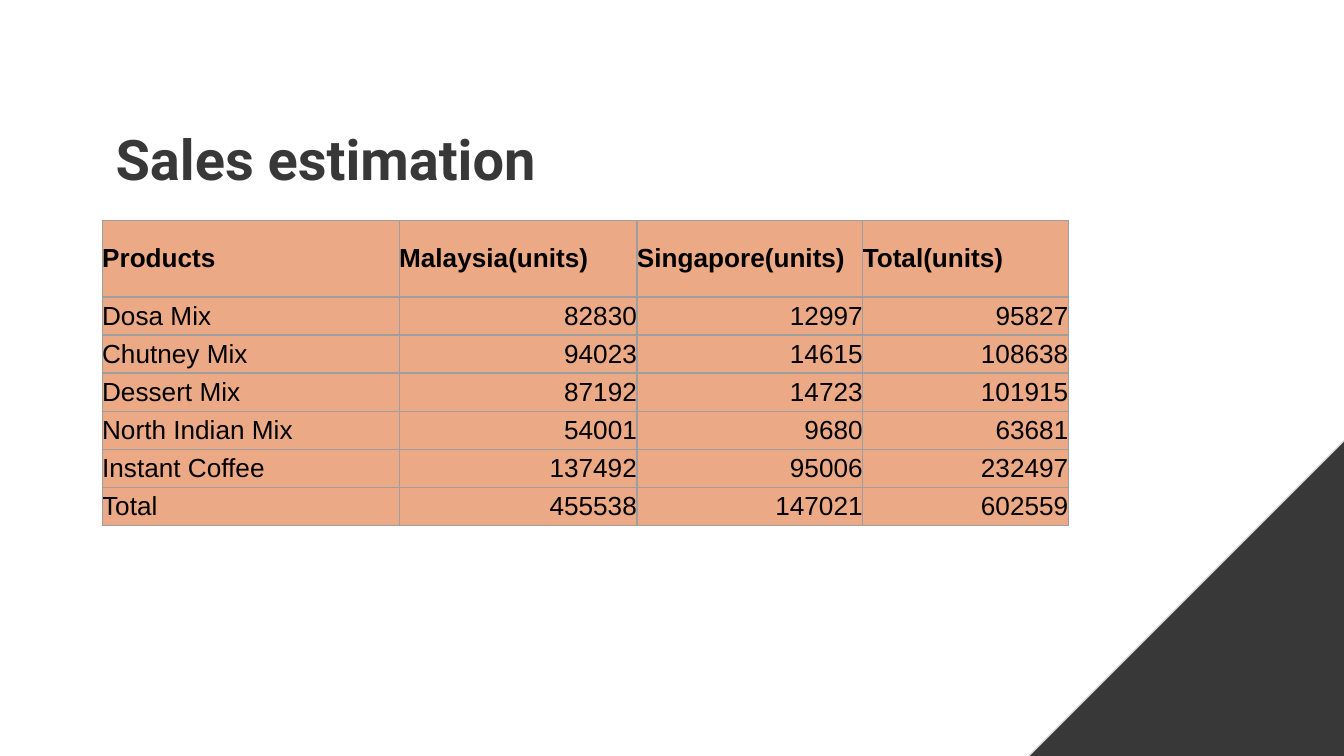
import dataclasses

import pptx
import pptx.dml.color
import pptx.enum.shapes
import pptx.enum.text
import pptx.oxml
import pptx.oxml.ns
import pptx.util
from pptx.util import Inches


@dataclasses.dataclass(frozen=True)
class Theme:
    dark: str = "383838"
    edge: str = "DBDBDB"
    cell: str = "EBA985"
    grid: str = "9E9E9E"
    ink: str = "000000"
    title_font: str = "Roboto"
    table_font: str = "Arial"
    title_size: float = 30
    table_size: float = 14
    line_width: float = 0.75


THEME = Theme()
ALIGN = pptx.enum.text.PP_ALIGN
ANCHOR = pptx.enum.text.MSO_ANCHOR

TABLE_HEIGHT = 2.27
HEADER_HEIGHT = 0.57
COLUMN_WIDTHS = (2.21, 1.77, 1.68, 1.53)
SALES = (
    ("Products ", "Malaysia(units)", "Singapore(units)", "Total(units)"),
    ("Dosa Mix", 82830, 12997, 95827),
    ("Chutney Mix", 94023, 14615, 108638),
    ("Dessert Mix", 87192, 14723, 101915),
    ("North Indian Mix", 54001, 9680, 63681),
    ("Instant Coffee", 137492, 95006, 232497),
    ("Total", 455538, 147021, 602559),
)


def rgb(color):
    return pptx.dml.color.RGBColor.from_string(color)


def style_paragraph(para, font, size, color, bold, align):
    para.alignment = align
    para.font.name = font
    para.font.size = pptx.util.Pt(size)
    para.font.color.rgb = rgb(color)
    para.font.bold = bold


def set_margins(target, margin):
    target.margin_left = target.margin_right = Inches(margin)
    target.margin_top = target.margin_bottom = Inches(margin)


def add_corner(page):
    corner = page.shapes.add_shape(
        pptx.enum.shapes.MSO_SHAPE.RIGHT_TRIANGLE,
        Inches(6.35), Inches(1.68), Inches(5.25), Inches(5.25))
    corner.shadow.inherit = False
    corner.fill.solid()
    corner.fill.fore_color.rgb = rgb(THEME.dark)
    corner.line.color.rgb = rgb(THEME.edge)
    corner.line.width = pptx.util.Pt(THEME.line_width)
    corner.element.spPr.xfrm.set("flipH", "1")


def fill_title(page, text):
    title = page.shapes.title
    title.left, title.top = Inches(0.76), Inches(0.83)
    title.width, title.height = Inches(6.31), Inches(0.58)
    frame = title.text_frame
    frame.text = text
    frame.word_wrap = True
    frame.auto_size = pptx.enum.text.MSO_AUTO_SIZE.NONE
    frame.vertical_anchor = ANCHOR.TOP
    set_margins(frame, 0.1)
    style_paragraph(frame.paragraphs[0], THEME.title_font, THEME.title_size,
                    THEME.dark, True, ALIGN.LEFT)


def add_borders(cell):
    properties = cell._tc.get_or_add_tcPr()
    width = pptx.util.Pt(THEME.line_width)
    for index, side in enumerate(("lnL", "lnR", "lnT", "lnB")):
        border = pptx.oxml.parse_xml(
            f'<a:{side} {pptx.oxml.ns.nsdecls("a")} w="{width}"><a:solidFill>'
            f'<a:srgbClr val="{THEME.grid}"/></a:solidFill></a:{side}>')
        properties.insert(index, border)


def fill_cell(cell, value, header):
    cell.text = str(value)
    cell.vertical_anchor = ANCHOR.MIDDLE
    set_margins(cell, 0)
    cell.fill.solid()
    cell.fill.fore_color.rgb = rgb(THEME.cell)
    add_borders(cell)
    align = ALIGN.RIGHT if isinstance(value, int) else ALIGN.LEFT
    style_paragraph(cell.text_frame.paragraphs[0], THEME.table_font,
                    THEME.table_size, THEME.ink, header, align)


def add_sales_table(page):
    table = page.shapes.add_table(
        len(SALES), len(COLUMN_WIDTHS), Inches(0.76), Inches(1.64),
        Inches(sum(COLUMN_WIDTHS)), Inches(TABLE_HEIGHT)).table
    for column, width in zip(table.columns, COLUMN_WIDTHS):
        column.width = Inches(width)
    body_height = (TABLE_HEIGHT - HEADER_HEIGHT) / (len(SALES) - 1)
    for index, values in enumerate(SALES):
        header = index == 0
        row = table.rows[index]
        row.height = Inches(HEADER_HEIGHT if header else body_height)
        for cell, value in zip(row.cells, values):
            fill_cell(cell, value, header)


def main():
    deck = pptx.Presentation()
    deck.slide_width = Inches(10)
    deck.slide_height = deck.slide_width * 9 // 16
    page = deck.slides.add_slide(deck.slide_layouts.get_by_name("Title Only"))
    add_corner(page)
    add_sales_table(page)
    fill_title(page, "Sales estimation")
    deck.save("out.pptx")


if __name__ == "__main__":
    main()
